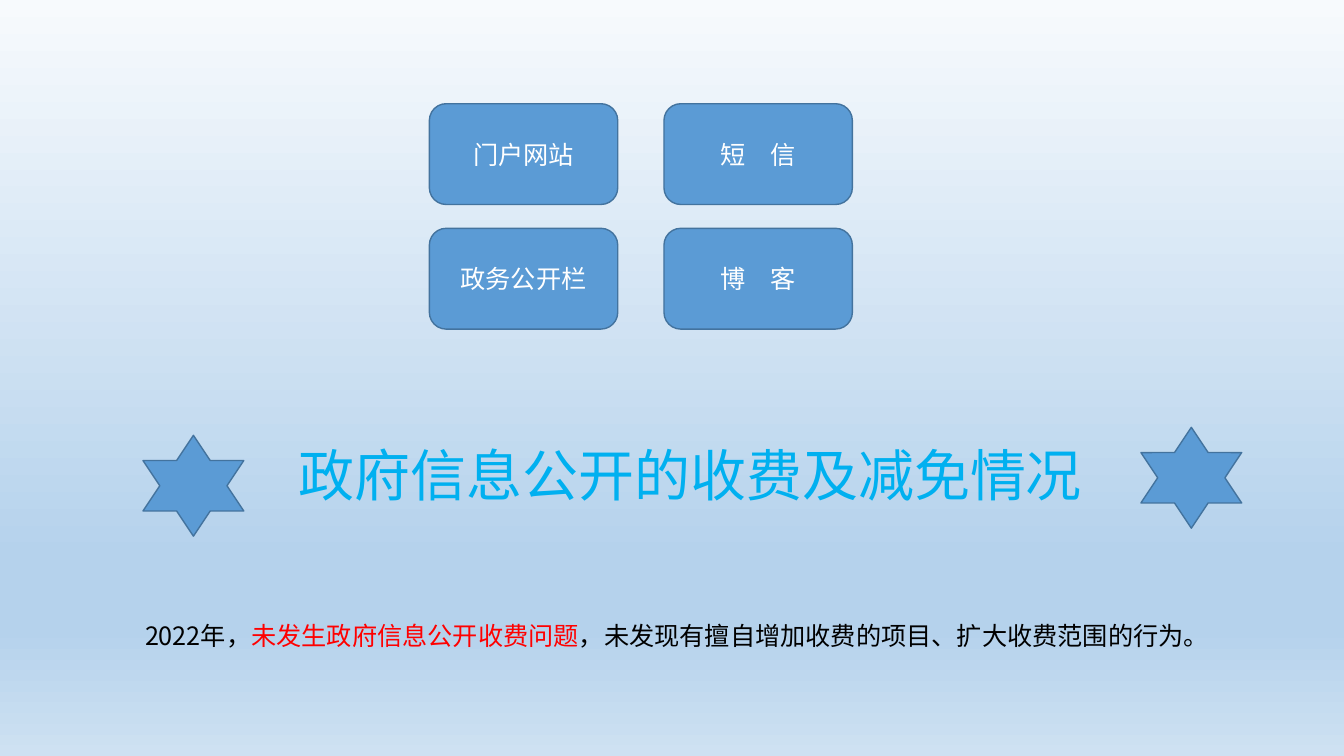
from pptx import Presentation
from pptx.dml.color import RGBColor
from pptx.enum import shapes as kinds, text as modes
from pptx.oxml import ns, xmlchemy as xml
from pptx.util import Pt

HUES = {"blue": "5B9BD5", "edge": "43739E", "white": "FFFFFF",
        "cyan": "00B0F0", "red": "FF0000", "black": "000000"}
SKY = [(0, "F7FAFD"), (74, "B5D2EC"), (83, "B5D2EC"), (100, "CEE1F2")]
HAN = "Noto Sans CJK SC"
CARDS = [["门户网站", "短　信"], ["政务公开栏", "博　客"]]
STARS = [(102.2, 311), (815, 305.3)]


def hue(name):
    """Return the named colour."""
    return RGBColor.from_string(HUES[name])


def paint(slide):
    """Fill the background with the sky gradient."""
    fill = slide.background.fill
    fill.gradient()
    fill.gradient_angle = 270
    stops = slide.element.find(".//" + ns.qn("a:gsLst"))
    stops.clear()
    for place, code in SKY:
        stop = xml.OxmlElement("a:gs")
        stop.set("pos", str(place * 1000))
        tint = xml.OxmlElement("a:srgbClr")
        tint.set("val", code)
        stop.append(tint)
        stops.append(stop)


def write(shape, *parts, size=18, font=HAN, align=modes.PP_ALIGN.CENTER):
    """Write (text, colour) parts as one paragraph."""
    line = shape.text_frame.paragraphs[0]
    line.alignment = align
    for words, name in parts:
        run = line.add_run()
        run.text = words
        run.font.size = Pt(size)
        run.font.color.rgb = hue(name)
        run.font.name = font
        east = xml.OxmlElement("a:ea")
        east.set("typeface", HAN)
        run.font._element.append(east)


def block(slide, kind, x, y, w, h):
    """Add an outlined blue shape."""
    shape = slide.shapes.add_shape(kind, Pt(x), Pt(y), Pt(w), Pt(h))
    shape.shadow.inherit = False
    shape.fill.solid()
    shape.fill.fore_color.rgb = hue("blue")
    shape.line.color.rgb = hue("edge")
    shape.line.width = Pt(1)
    shape.text_frame.vertical_anchor = modes.MSO_ANCHOR.MIDDLE
    return shape


def label(slide, x, y, w, h):
    """Add a wrapping text box that grows with its text."""
    box = slide.shapes.add_textbox(Pt(x), Pt(y), Pt(w), Pt(h))
    box.text_frame.word_wrap = True
    box.text_frame.auto_size = modes.MSO_AUTO_SIZE.SHAPE_TO_FIT_TEXT
    return box


def main():
    """Build and save the slide."""
    deck = Presentation()
    deck.slide_width, deck.slide_height = Pt(960), Pt(540)
    slide = deck.slides.add_slide(deck.slide_layouts[6])
    paint(slide)
    for row, names in enumerate(CARDS):
        for col, name in enumerate(names):
            card = block(slide, kinds.MSO_SHAPE.ROUNDED_RECTANGLE,
                         306.7 + 167.6 * col, 74.1 + 89 * row, 134.6, 72)
            write(card, (name, "white"), font="Calibri")
    title = label(slide, 55.4, 311, 875.5, 55.4)
    write(title, ("政府信息公开的收费及减免情况", "cyan"), size=40, font="Arial")
    note = label(slide, 96.5, 439.2, 782, 28.8)
    write(note, ("2022年，", "black"), ("未发生政府信息公开收费问题", "red"),
          ("，未发现有擅自增加收费的项目、扩大收费范围的行为。", "black"),
          align=modes.PP_ALIGN.LEFT)
    for x, y in STARS:
        block(slide, kinds.MSO_SHAPE.STAR_6_POINT, x, y, 72, 72)
    deck.save("out.pptx")


if __name__ == "__main__":
    main()
